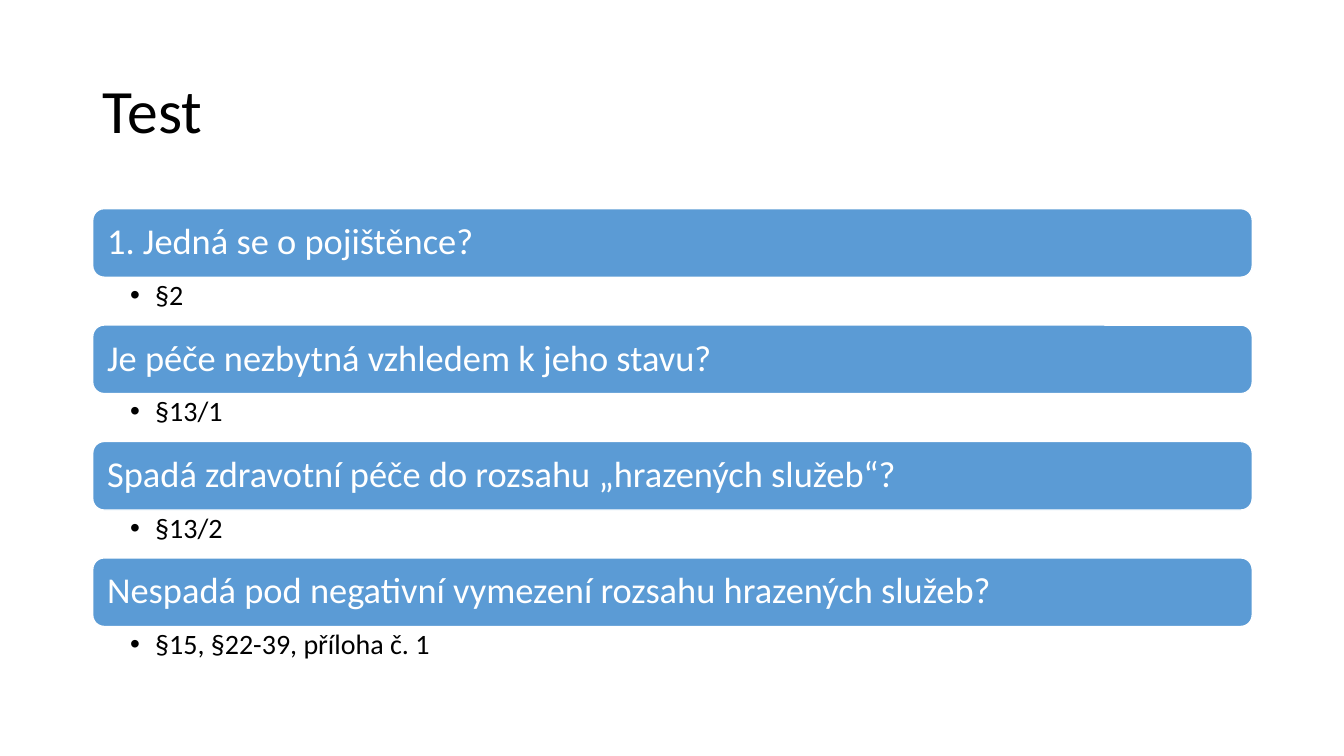
from dataclasses import dataclass

from lxml import etree
from pptx import Presentation, util as u
from pptx.dml.color import RGBColor
from pptx.enum import shapes, text
from pptx.oxml.ns import qn


@dataclass(frozen=True)
class Theme:
    font: str = "Calibri"
    dark: str = "000000"
    light: str = "FFFFFF"
    bar: str = "5B9BD5"
    title_size: int = 44
    question_size: int = 26
    section_size: int = 20


@dataclass(frozen=True)
class Step:
    question: str
    section: str


THEME = Theme()
WIDTH, HEIGHT = 13.33, 7.5

# Grid in inches: one column, one row per test step
LEFT, COLUMN = 0.92, 11.5
TOP, ROW = 2.07, 1.155
BAR, SECTION = 0.68, 0.47

STEPS = [
    Step("1. Jedná se o pojištěnce?", "§2"),
    Step("Je péče nezbytná vzhledem k jeho stavu?", "§13/1"),
    Step("Spadá zdravotní péče do rozsahu „hrazených služeb“?", "§13/2"),
    Step("Nespadá pod negativní vymezení rozsahu hrazených služeb?",
         "§15, §22-39, příloha č. 1"),
]


def box(top: float, height: float) -> list[int]:
    return [u.Inches(v) for v in (LEFT, top, COLUMN, height)]


def write(tf, words: str, size: int, color: str, anchor,
          insets: tuple[float, float, float, float]) -> None:
    """Fill a text frame with one left-aligned paragraph."""
    left, top, right, bottom = map(u.Inches, insets)
    frame_format = {
        "word_wrap": True, "auto_size": text.MSO_AUTO_SIZE.NONE,
        "vertical_anchor": anchor,
        "margin_left": left, "margin_top": top,
        "margin_right": right, "margin_bottom": bottom,
    }
    for name, value in frame_format.items():
        setattr(tf, name, value)
    p = tf.paragraphs[0]
    p.alignment, p.line_spacing = text.PP_ALIGN.LEFT, 0.9
    r = p.add_run()
    r.text = words
    for name, value in {"name": THEME.font, "size": u.Pt(size)}.items():
        setattr(r.font, name, value)
    r.font.color.rgb = RGBColor.from_string(color)


def add_bullet(p) -> None:
    p.level = 1
    pPr = p._p.get_or_add_pPr()
    pPr.set("marL", str(u.Inches(0.25)))
    pPr.set("indent", str(-u.Inches(0.25)))
    etree.SubElement(pPr, qn("a:buFont"), typeface="Arial")
    etree.SubElement(pPr, qn("a:buChar"), char="•")


def draw_step(s, step: Step, top: float) -> None:
    # Question bar
    sp = s.shapes.add_shape(shapes.MSO_SHAPE.ROUNDED_RECTANGLE, *box(top, BAR))
    sp.shadow.inherit = False
    sp.fill.solid()
    sp.fill.fore_color.rgb = RGBColor.from_string(THEME.bar)
    sp.line.color.rgb = RGBColor.from_string(THEME.light)
    sp.line.width = u.Pt(1)
    write(sp.text_frame, step.question, THEME.question_size, THEME.light,
          text.MSO_ANCHOR.MIDDLE, (0.11, 0.11, 0.11, 0.11))

    # Section of the law
    tf = s.shapes.add_textbox(*box(top + BAR, SECTION)).text_frame
    add_bullet(tf.paragraphs[0])
    write(tf, step.section, THEME.section_size, THEME.dark,
          text.MSO_ANCHOR.TOP, (0.37, 0.04, 0.2, 0.04))


def main() -> None:
    prs = Presentation()
    prs.slide_width, prs.slide_height = u.Inches(WIDTH), u.Inches(HEIGHT)
    s = prs.slides.add_slide(prs.slide_layouts.get_by_name("Title Only"))

    # Title
    title = s.shapes.title
    title.left, title.top, title.width, title.height = box(0.4, 1.45)
    write(title.text_frame, "Test", THEME.title_size, THEME.dark,
          text.MSO_ANCHOR.MIDDLE, (0.1, 0.05, 0.1, 0.05))

    # Test steps
    for row, step in enumerate(STEPS):
        draw_step(s, step, TOP + row * ROW)

    prs.save("out.pptx")


if __name__ == "__main__":
    main()
